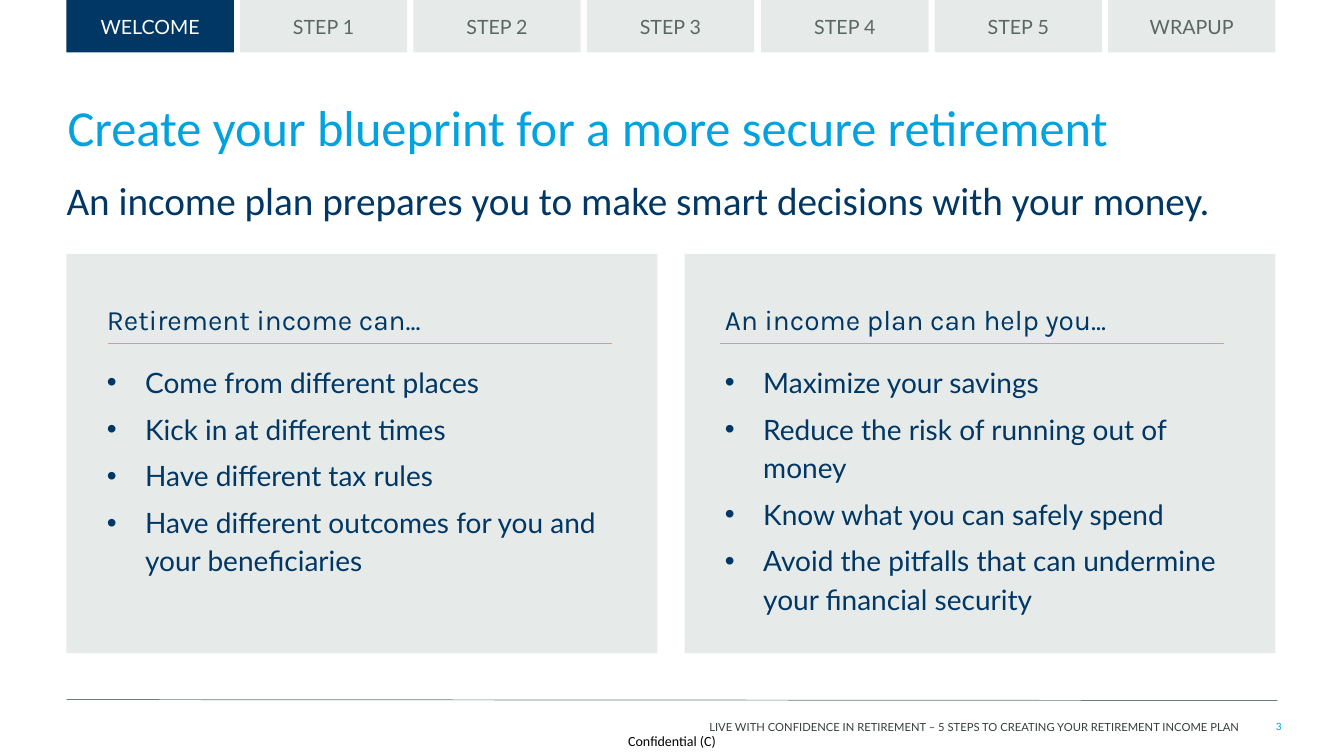
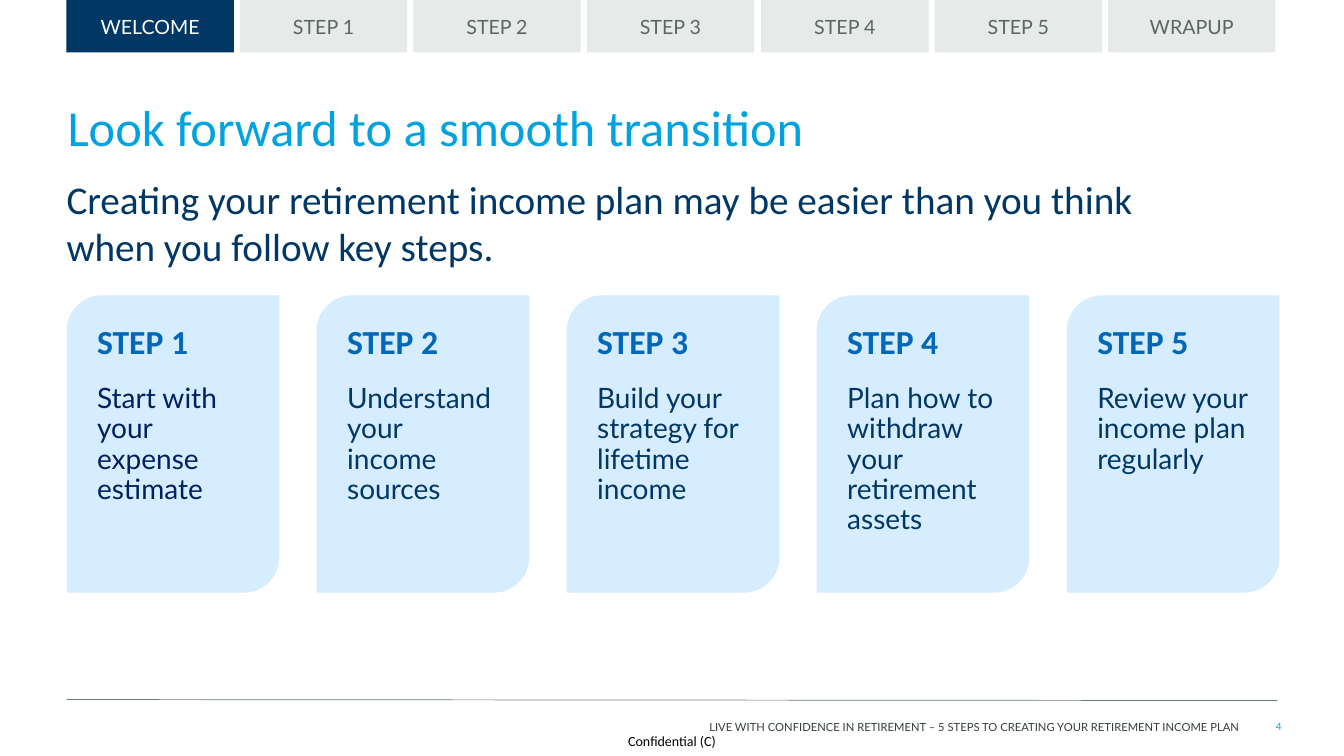
from dataclasses import dataclass

from lxml.etree import SubElement
from pptx import Presentation
from pptx.dml.color import RGBColor
from pptx.enum.shapes import MSO_CONNECTOR as Connector, MSO_SHAPE as Preset
from pptx.enum.text import MSO_ANCHOR as Anchor, PP_ALIGN as Align
from pptx.oxml.ns import qn
from pptx.shapes.autoshape import Shape
from pptx.slide import Slide
from pptx.util import Pt

PX = 9144  # EMU in one px, 100 px to the inch


@dataclass(frozen=True)
class Theme:
    navy: str = "003765"
    deep_navy: str = "002060"
    sky: str = "00A3E0"
    blue: str = "0067B9"
    pale_blue: str = "D6ECFF"
    mist: str = "E6EAE9"
    slate: str = "5B6764"
    rule_grey: str = "6A7E79"
    footer_grey: str = "353F3D"
    amber: str = "FFA300"
    white: str = "FFFFFF"
    black: str = "000000"
    sans: str = "Calibri"
    body: str = "Lato"
    accent: str = "Karla"
    title_size: int = 36
    lead_size: int = 28
    step_size: int = 24
    body_size: int = 20
    tab_size: int = 14
    note_size: int = 10
    footer_size: int = 8


THEME = Theme()


@dataclass(frozen=True)
class Box:
    left: int
    top: int
    width: int
    height: int

    def emu(self) -> tuple[int, int, int, int]:
        return self.left * PX, self.top * PX, self.width * PX, self.height * PX


@dataclass(frozen=True)
class Para:
    lines: tuple[str, ...]
    font: str
    size: int
    color: str
    bold: bool = False
    align: Align = Align.LEFT
    spacing: float | Pt | None = None
    before: float = 0
    after: float = 0
    hanging: int = 0


@dataclass(frozen=True)
class Panel:
    heading: str
    points: tuple[str, ...]
    left: int
    rule_left: int


@dataclass(frozen=True)
class Step:
    text: str
    color: str = THEME.navy
    right_inset: int = 20


TABS = ("WELCOME", "STEP 1", "STEP 2", "STEP 3", "STEP 4", "STEP 5", "WRAPUP")
MARGIN = 66
CONTENT_WIDTH = 1199
FOOTER = "LIVE WITH CONFIDENCE IN RETIREMENT – 5 STEPS TO CREATING YOUR RETIREMENT INCOME PLAN"

PANELS = (
    Panel("Retirement income can...",
          ("Come from different places", "Kick in at different times",
           "Have different tax rules",
           "Have different outcomes for you and your beneficiaries"), 66, 107),
    Panel("An income plan can help you...",
          ("Maximize your savings", "Reduce the risk of running out of money",
           "Know what you can safely spend",
           "Avoid the pitfalls that can undermine your financial security"), 679, 714),
)
STEPS = (
    Step("Start with your expense estimate", THEME.deep_navy),
    Step("Understand your income sources"),
    Step("Build your strategy for lifetime income"),
    Step("Plan how to withdraw your retirement assets", right_inset=0),
    Step("Review your income plan regularly"),
)


def rgb(color: str) -> RGBColor:
    return RGBColor.from_string(color)


def write(shape: Shape, paras: list[Para], anchor: Anchor = Anchor.TOP,
          insets: tuple[int, int, int, int] = (0, 0, 0, 0)) -> None:
    """Fill a shape with paragraphs; insets run left, top, right, bottom."""
    frame = shape.text_frame
    frame.word_wrap = True
    frame.vertical_anchor = anchor
    (frame.margin_left, frame.margin_top,
     frame.margin_right, frame.margin_bottom) = (inset * PX for inset in insets)
    for index, para in enumerate(paras):
        paragraph = frame.add_paragraph() if index else frame.paragraphs[0]
        for number, line in enumerate(para.lines):
            if number:
                paragraph.add_line_break()
            paragraph.add_run().text = line
        paragraph.alignment = para.align
        if para.spacing:
            paragraph.line_spacing = para.spacing
        paragraph.space_before = Pt(para.before)
        paragraph.space_after = Pt(para.after)
        if para.hanging:
            props = paragraph._p.get_or_add_pPr()
            props.set("marL", str(para.hanging * PX))
            props.set("indent", str(-para.hanging * PX))
            SubElement(props, qn("a:buFont")).set("typeface", "Arial")
            SubElement(props, qn("a:buChar")).set("char", "•")
        font = paragraph.font
        font.name, font.size, font.bold = para.font, Pt(para.size), para.bold
        font.color.rgb = rgb(para.color)


def add_text(slide: Slide, box: Box, para: Para, anchor: Anchor = Anchor.TOP) -> None:
    write(slide.shapes.add_textbox(*box.emu()), [para], anchor)


def add_block(slide: Slide, preset: Preset, box: Box, color: str) -> Shape:
    block = slide.shapes.add_shape(preset, *box.emu())
    block.shadow.inherit = False
    block.fill.solid()
    block.fill.fore_color.rgb = rgb(color)
    block.line.fill.background()
    return block


def add_rule(slide: Slide, start: tuple[int, int], end: tuple[int, int],
             color: str, weight: float) -> None:
    rule = slide.shapes.add_connector(
        Connector.STRAIGHT, *(value * PX for value in start + end))
    rule.line.color.rgb = rgb(color)
    rule.line.width = Pt(weight)
    SubElement(rule._element.spPr, qn("a:effectLst"))


def add_tabs(slide: Slide, active: str) -> None:
    width = 166
    pitch = (CONTENT_WIDTH - width) / (len(TABS) - 1)
    for index, label in enumerate(TABS):
        fill, ink = ((THEME.navy, THEME.white) if label == active
                     else (THEME.mist, THEME.slate))
        tab = add_block(slide, Preset.RECTANGLE,
                        Box(MARGIN + round(index * pitch), 0, width, 52), fill)
        write(tab, [Para((label,), THEME.body, THEME.tab_size, ink,
                         align=Align.CENTER)], Anchor.MIDDLE)


def add_footer(slide: Slide, number: int) -> None:
    add_rule(slide, (MARGIN, 694), (1267, 695), THEME.rule_grey, 0.5)
    add_text(slide, Box(592, 705, 638, 23),
             Para((FOOTER,), THEME.body, THEME.footer_size, THEME.footer_grey,
                  align=Align.RIGHT), Anchor.BOTTOM)
    add_text(slide, Box(1240, 711, 31, 16),
             Para((str(number),), THEME.sans, THEME.footer_size, THEME.sky,
                  align=Align.RIGHT), Anchor.BOTTOM)
    add_text(slide, Box(607, 721, 119, 29),
             Para(("Confidential (C)",), THEME.sans, THEME.note_size, THEME.black,
                  align=Align.CENTER), Anchor.MIDDLE)


def start_slide(deck: Presentation, number: int, title: str,
                lead: tuple[str, ...], lead_top: int) -> Slide:
    """Add a slide with the tabs, footer, title and lead sentence."""
    slide = deck.slides.add_slide(deck.slide_layouts[6])
    add_footer(slide, number)
    add_tabs(slide, "WELCOME")
    add_text(slide, Box(67, 114, 1198, 52),
             Para((title,), THEME.sans, THEME.title_size, THEME.sky, spacing=Pt(30)))
    add_text(slide, Box(MARGIN, lead_top, CONTENT_WIDTH, 50),
             Para(lead, THEME.sans, THEME.lead_size, THEME.navy))
    return slide


def add_panel(slide: Slide, panel: Panel) -> None:
    block = add_block(slide, Preset.RECTANGLE, Box(panel.left, 252, 586, 396), THEME.mist)
    heading = Para((panel.heading,), THEME.accent, THEME.body_size, THEME.navy,
                   spacing=1.14, after=15)
    points = [Para((point,), THEME.body, THEME.body_size, THEME.navy,
                   spacing=1.14, before=3, after=3, hanging=38)
              for point in panel.points]
    write(block, [heading, *points], insets=(40, 43, 40, 40))
    add_rule(slide, (panel.rule_left, 341), (panel.rule_left + 500, 341), THEME.amber, 1)


def add_step(slide: Slide, index: int, step: Step) -> None:
    card = add_block(slide, Preset.ROUND_2_DIAG_RECTANGLE,
                     Box(MARGIN + index * 248, 293, 211, 295), THEME.pale_blue)
    write(card, [
        Para((f"STEP {index + 1}",), THEME.sans, THEME.step_size, THEME.blue,
             bold=True, spacing=0.9, after=16),
        Para((step.text,), THEME.body, THEME.body_size, step.color, spacing=0.9),
    ], insets=(20, 20, step.right_inset, 20))


def main() -> None:
    deck = Presentation()
    deck.slide_width, deck.slide_height = 1333 * PX, 750 * PX

    # Blueprint: two panels of points
    blueprint = start_slide(
        deck, 3, "Create your blueprint for a more secure retirement",
        ("An income plan prepares you to make smart decisions with your money.",), 175)
    for panel in PANELS:
        add_panel(blueprint, panel)

    # Transition: five step cards
    transition = start_slide(
        deck, 4, "Look forward to a smooth transition",
        ("Creating your retirement income plan may be easier than you think",
         "when you follow key steps."), 174)
    for index, step in enumerate(STEPS):
        add_step(transition, index, step)

    deck.save("out.pptx")


if __name__ == "__main__":
    main()
